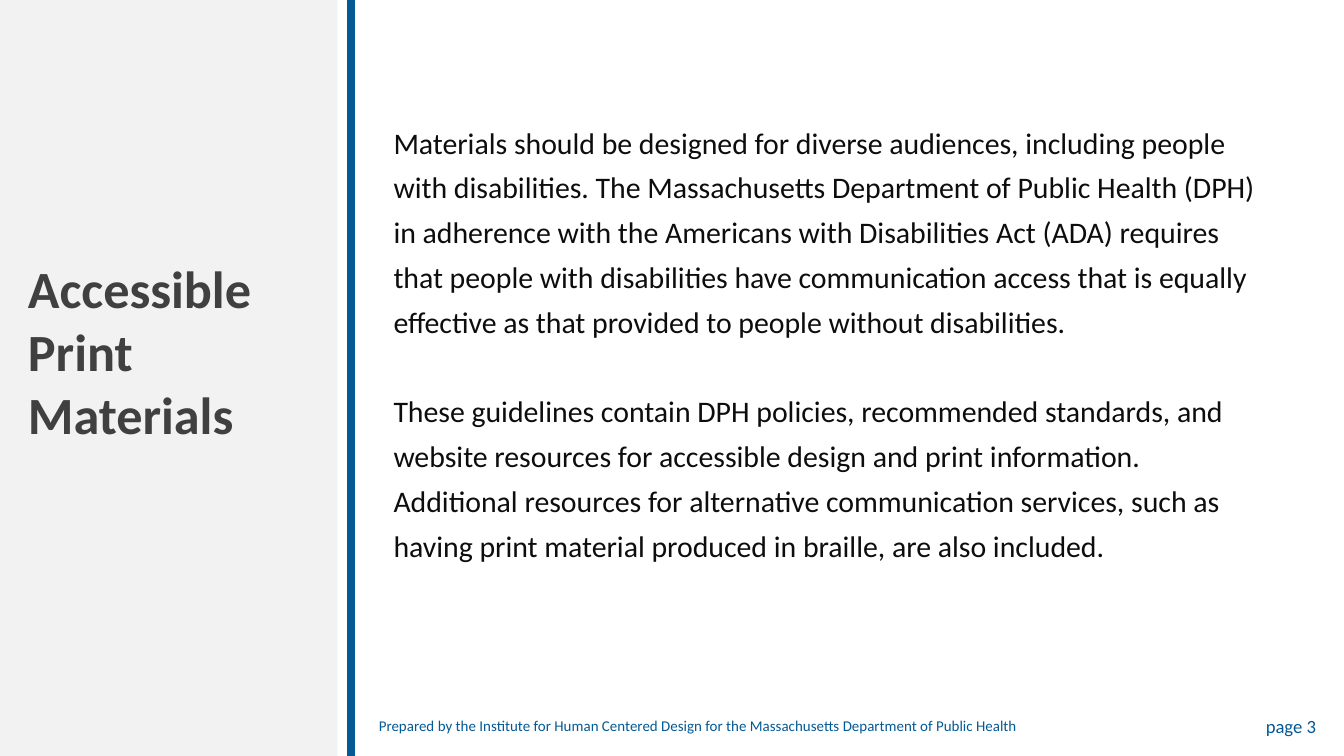
from pptx import Presentation
from pptx.dml.color import RGBColor
from pptx.enum.shapes import MSO_CONNECTOR, MSO_SHAPE
from pptx.enum.text import MSO_ANCHOR, PP_ALIGN
from pptx.oxml.ns import qn
from pptx.util import Inches, Pt
from lxml import etree

LINE = MSO_CONNECTOR.STRAIGHT
RECT = MSO_SHAPE.RECTANGLE
TOP, MID = MSO_ANCHOR.TOP, MSO_ANCHOR.MIDDLE
LEFT, RIGHT = PP_ALIGN.LEFT, PP_ALIGN.RIGHT

BLUE = RGBColor(0x05, 0x59, 0x94)
PALE = RGBColor(0xF2, 0xF2, 0xF2)
GRAY = RGBColor(0x40, 0x40, 0x40)
INK = RGBColor(0x0D, 0x0D, 0x0D)

WIDE = 10
HIGH = WIDE * 9 / 16
BODY = [
    "Materials should be designed for diverse audiences, including people "
    "with disabilities. The Massachusetts Department of Public Health (DPH) "
    "in adherence with the Americans with Disabilities Act (ADA) requires "
    "that people with disabilities have communication access that is equally "
    "effective as that provided to people without disabilities.",
    "These guidelines contain DPH policies, recommended standards, and "
    "website resources for accessible design and print information. "
    "Additional resources for alternative communication services, such as "
    "having print material produced in braille, are also included.",
]
CREDIT = ("Prepared by the Institute for Human Centered Design "
          "for the Massachusetts Department of Public Health")


class Page:
    font = "Calibri"

    def __init__(self, slide):
        self.slide = slide

    def panel(self, x, y, w, h, color):
        box = self.slide.shapes.add_shape(
            RECT, Inches(x), Inches(y), Inches(w), Inches(h))
        box.shadow.inherit = False
        box.fill.solid()
        box.fill.fore_color.rgb = color
        box.line.fill.background()

    def rule(self, x, top, end, color, width):
        line = self.slide.shapes.add_connector(
            LINE, Inches(x), Inches(top), Inches(x), Inches(end))
        line.line.color.rgb = color
        line.line.width = Pt(width)
        props = line._element.find(qn("p:spPr"))
        etree.SubElement(props, qn("a:effectLst"))

    def text(self, x, y, w, h, parts, size, color, bold=False,
             align=LEFT, anchor=TOP, pitch=1.0, gap=0):
        box = self.slide.shapes.add_textbox(
            Inches(x), Inches(y), Inches(w), Inches(h))
        frame = box.text_frame
        frame.word_wrap = True
        frame.vertical_anchor = anchor
        frame.text = "\n".join(parts)
        for i, para in enumerate(frame.paragraphs):
            para.alignment = align
            para.line_spacing = pitch
            para.space_before = Pt(gap if i else 0)
            for run in para.runs:
                run.font.name = self.font
                run.font.size = Pt(size)
                run.font.bold = bold
                run.font.color.rgb = color


def main():
    deck = Presentation()
    deck.slide_width, deck.slide_height = Inches(WIDE), Inches(HIGH)
    page = Page(deck.slides.add_slide(deck.slide_layouts[6]))
    page.rule(2.61, 0, HIGH, BLUE, 4.5)
    page.panel(0, 0, 2.51, HIGH, PALE)
    page.text(2.83, 0.81, 6.67, 3.44, BODY, 16, INK, pitch=1.25, gap=24)
    page.text(2.72, 5.25, 5.75, 0.3, [CREDIT], 8, BLUE, anchor=MID)
    page.text(7.56, 5.25, 2.33, 0.3, ["page 3"], 10, BLUE,
              align=RIGHT, anchor=MID)
    page.text(0.11, 1.86, 2.25, 1.82, ["Accessible Print Materials"],
              28, GRAY, bold=True)
    deck.save("out.pptx")


if __name__ == "__main__":
    main()
